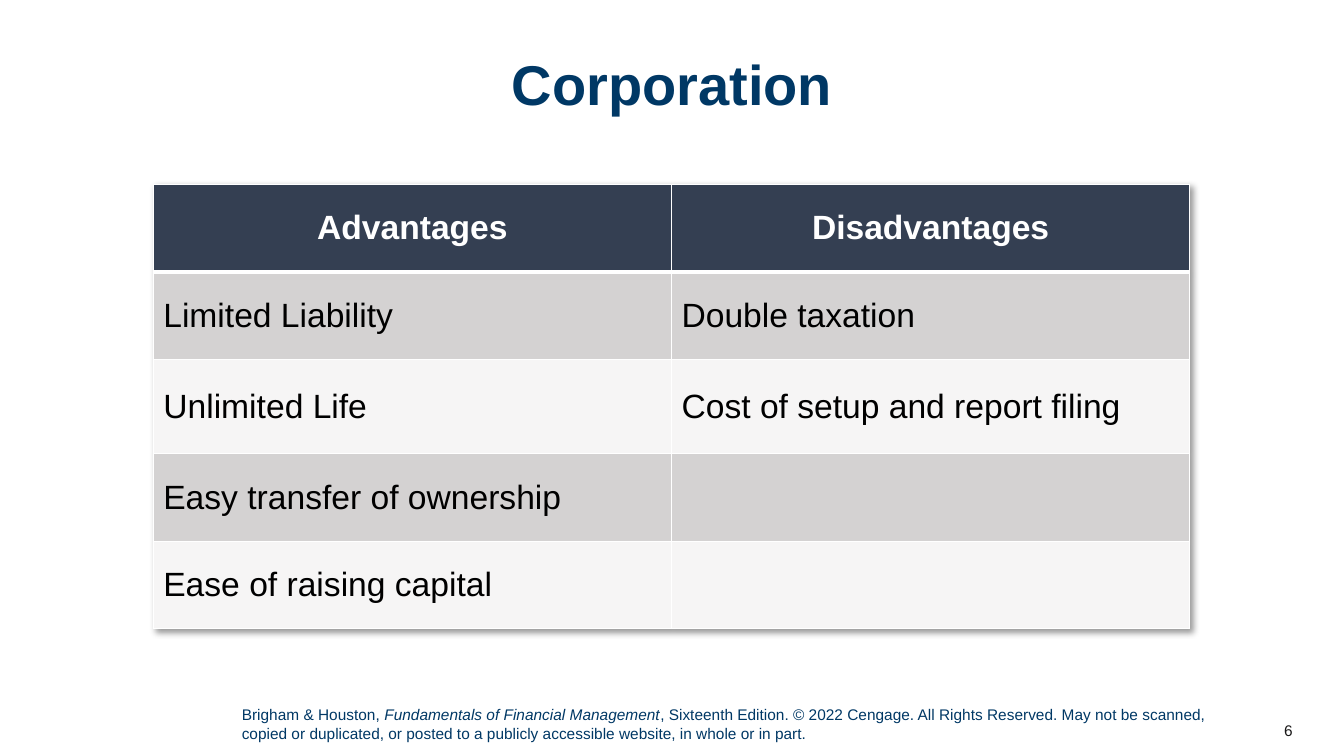
"""Build the slide on advantages and disadvantages of a corporation."""
from lxml import etree
from pptx import Presentation
from pptx.dml.color import RGBColor
from pptx.enum.text import MSO_ANCHOR, PP_ALIGN
from pptx.oxml import parse_xml
from pptx.oxml.ns import qn
from pptx.util import Pt

PX = 9144
LEFT, CENTER, RIGHT = PP_ALIGN.LEFT, PP_ALIGN.CENTER, PP_ALIGN.RIGHT
TOP, MIDDLE = MSO_ANCHOR.TOP, MSO_ANCHOR.MIDDLE
NAVY = RGBColor(0x00, 0x38, 0x65)
SLATE = RGBColor(0x34, 0x3F, 0x52)
WHITE = RGBColor(0xFF, 0xFF, 0xFF)
BLACK = RGBColor(0x00, 0x00, 0x00)
CHARCOAL = RGBColor(0x18, 0x17, 0x17)
BANDS = [RGBColor(0xF6, 0xF5, 0xF5), RGBColor(0xD4, 0xD2, 0xD2)]
SHADOW = (
    '<a:effectLst xmlns:a="http://schemas.openxmlformats.org/drawingml/2006/main">'
    '<a:outerShdw blurRad="50800" dist="38100" dir="2700000" algn="tl" rotWithShape="0">'
    '<a:srgbClr val="000000"><a:alpha val="40000"/></a:srgbClr>'
    '</a:outerShdw></a:effectLst>'
)


def write(frame, *texts, size, color, bold=False, italic=None, align=LEFT, spacing=None):
    """Fill one paragraph with runs, setting the run equal to italic in italics."""
    frame.word_wrap = True
    paragraph = frame.paragraphs[0]
    paragraph.alignment = align
    paragraph.line_spacing = spacing
    for text in texts:
        run = paragraph.add_run()
        run.text = text
        run.font.name = "Arial"
        run.font.size = Pt(size)
        run.font.bold = bold
        run.font.italic = text == italic
        run.font.color.rgb = color


def add_frame(left, top, width, height, anchor=TOP):
    """Add a text box and return its text frame."""
    box = slide.shapes.add_textbox(left * PX, top * PX, width * PX, height * PX)
    box.text_frame.vertical_anchor = anchor
    return box.text_frame


deck = Presentation()
deck.slide_width, deck.slide_height = 1333 * PX, 750 * PX
slide = deck.slides.add_slide(deck.slide_layouts[6])

write(add_frame(1212, 705, 80, 40, MIDDLE), "6", size=11, color=CHARCOAL, align=RIGHT)

book = "Fundamentals of Financial Management"
write(
    add_frame(230, 695, 980, 47),
    "Brigham & Houston, ",
    book,
    ", Sixteenth Edition. © 2022 Cengage. All Rights Reserved. May not be scanned, "
    "copied or duplicated, or posted to a publicly accessible website, in whole or in part.",
    size=11, color=NAVY, italic=book,
)

write(add_frame(52, 52, 1229, 133), "Corporation",
      size=40, color=NAVY, bold=True, align=CENTER, spacing=0.9)

comparison = [
    ("Advantages", "Disadvantages"),
    ("Limited Liability", "Double taxation"),
    ("Unlimited Life", "Cost of setup and report filing"),
    ("Easy transfer of ownership", ""),
    ("Ease of raising capital", ""),
]
row_heights = [87, 87, 93, 87, 87]
table = slide.shapes.add_table(
    len(comparison), 2, 152 * PX, 183 * PX, 1028 * PX, sum(row_heights) * PX
).table
table._tbl.tblPr.insert(0, parse_xml(SHADOW))

for row, (entries, height) in enumerate(zip(comparison, row_heights)):
    table.rows[row].height = height * PX
    header = row == 0
    widths = {"lnL": 1, "lnR": 1, "lnT": 3 if row == 1 else 1, "lnB": 3 if header else 1}
    for column, entry in enumerate(entries):
        cell = table.cell(row, column)
        cell.vertical_anchor = MIDDLE
        properties = cell._tc.get_or_add_tcPr()
        for side, width in widths.items():
            line = etree.SubElement(properties, qn(f"a:{side}"), w=str(Pt(width)))
            solid = etree.SubElement(line, qn("a:solidFill"))
            etree.SubElement(solid, qn("a:srgbClr"), val=str(WHITE))
        cell.fill.solid()
        cell.fill.fore_color.rgb = SLATE if header else BANDS[row % 2]
        if entry:
            write(cell.text_frame, entry, size=24, color=WHITE if header else BLACK,
                  bold=header, align=CENTER if header else LEFT)

deck.save("out.pptx")
